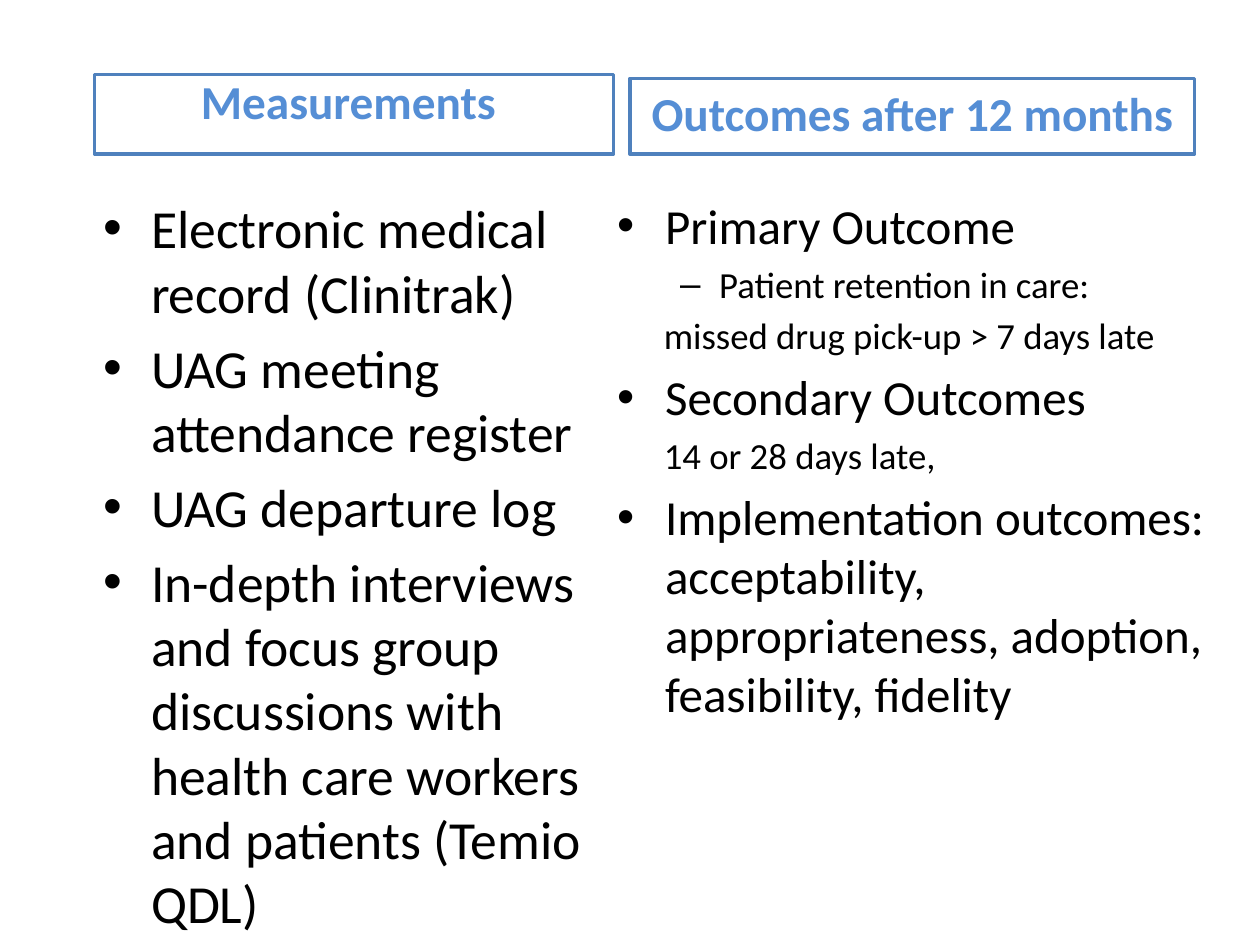
from dataclasses import dataclass

from lxml import etree
from pptx import Presentation
from pptx.dml.color import RGBColor
from pptx.enum.shapes import MSO_SHAPE
from pptx.enum.text import MSO_ANCHOR, PP_ALIGN
from pptx.oxml.ns import qn
from pptx.slide import Slide
from pptx.text.text import TextFrame
from pptx.util import Inches, Pt

RECT = MSO_SHAPE.RECTANGLE
TOP = MSO_ANCHOR.TOP
LEFT, MID = PP_ALIGN.LEFT, PP_ALIGN.CENTER
WIDE, HIGH = Inches(10), Inches(7.5)


@dataclass(frozen=True)
class Theme:
    font: str = "Calibri"
    ink: RGBColor = RGBColor(0x00, 0x00, 0x00)
    head: RGBColor = RGBColor(0x55, 0x8E, 0xD5)
    edge: RGBColor = RGBColor(0x4F, 0x81, 0xBD)
    title: float = 27
    large: float = 30.6
    main: float = 28
    small: float = 21
    line: float = 2
    gap: float = 0.2


@dataclass(frozen=True)
class Area:
    x: float
    y: float
    w: float
    h: float

    def place(self) -> tuple[int, int, int, int]:
        return (round(self.x * WIDE), round(self.y * HIGH),
                round(self.w * WIDE), round(self.h * HIGH))


@dataclass(frozen=True)
class Style:
    size: float
    level: int = 0
    left: float = 0.38
    hang: float = -0.38
    mark: str = "•"


@dataclass(frozen=True)
class Item:
    text: str
    style: Style


@dataclass(frozen=True)
class Column:
    title: str
    label: Area
    frame: Area
    body: Area
    items: tuple[Item, ...]


THEME = Theme()
LARGE = Style(THEME.large)
MAIN = Style(THEME.main)
DASH = Style(THEME.small, 1, 0.81, -0.31, "–")
PLAIN = Style(THEME.small, 1, 0.37, 0, "")

COLUMNS = (
    Column(
        "Measurements",
        Area(0.072, 0.07, 0.409, 0.075),
        Area(0.075, 0.079, 0.412, 0.084),
        Area(0.072, 0.2, 0.409, 0.667),
        (
            Item("Electronic medical record (Clinitrak)", LARGE),
            Item("UAG meeting attendance register", LARGE),
            Item("UAG departure log", LARGE),
            Item("In-depth interviews and focus group discussions with "
                 "health care workers and patients (Temio QDL)", LARGE),
        ),
    ),
    Column(
        "Outcomes after 12 months",
        Area(0.5, 0.083, 0.448, 0.075),
        Area(0.5, 0.083, 0.448, 0.08),
        Area(0.48, 0.2, 0.52, 0.767),
        (
            Item("Primary Outcome", MAIN),
            Item("Patient retention in care:", DASH),
            Item("missed drug pick-up > 7 days late", PLAIN),
            Item("Secondary Outcomes", MAIN),
            Item("14 or 28 days late,", PLAIN),
            Item("Implementation outcomes: acceptability, "
                 "appropriateness, adoption, feasibility, fidelity", MAIN),
        ),
    ),
)


def add_box(slide: Slide, area: Area) -> TextFrame:
    frame = slide.shapes.add_textbox(*area.place()).text_frame
    frame.word_wrap = True
    frame.vertical_anchor = TOP
    return frame


def add_run(para, text: str, size: float, color: RGBColor, bold: bool) -> None:
    run = para.add_run()
    run.text = text
    font = run.font
    font.name, font.size, font.bold = THEME.font, Pt(size), bold
    font.color.rgb = color


def add_label(slide: Slide, area: Area, text: str) -> None:
    para = add_box(slide, area).paragraphs[0]
    para.alignment = MID
    add_run(para, text, THEME.title, THEME.head, True)


def add_list(slide: Slide, area: Area, items: tuple[Item, ...]) -> None:
    frame = add_box(slide, area)
    for place, item in enumerate(items):
        style = item.style
        para = frame.add_paragraph() if place else frame.paragraphs[0]
        para.level, para.alignment = style.level, LEFT
        props = para._p.get_or_add_pPr()
        props.set("marL", str(Inches(style.left)))
        props.set("indent", str(Inches(style.hang)))
        if style.mark:
            face = etree.SubElement(props, qn("a:buFont"))
            face.set("typeface", "Arial")
            mark = etree.SubElement(props, qn("a:buChar"))
            mark.set("char", style.mark)
        else:
            etree.SubElement(props, qn("a:buNone"))
        if place:
            para.space_before = Pt(style.size * THEME.gap)
        add_run(para, item.text, style.size, THEME.ink, False)


def add_frame(slide: Slide, area: Area) -> None:
    shape = slide.shapes.add_shape(RECT, *area.place())
    shape.shadow.inherit = False
    shape.fill.background()
    shape.line.color.rgb = THEME.edge
    shape.line.width = Pt(THEME.line)


def main() -> None:
    deck = Presentation()
    deck.slide_width, deck.slide_height = WIDE, HIGH
    slide = deck.slides.add_slide(deck.slide_layouts[6])
    for col in COLUMNS:
        add_list(slide, col.body, col.items)
        add_label(slide, col.label, col.title)
        add_frame(slide, col.frame)
    deck.save("out.pptx")


if __name__ == "__main__":
    main()
